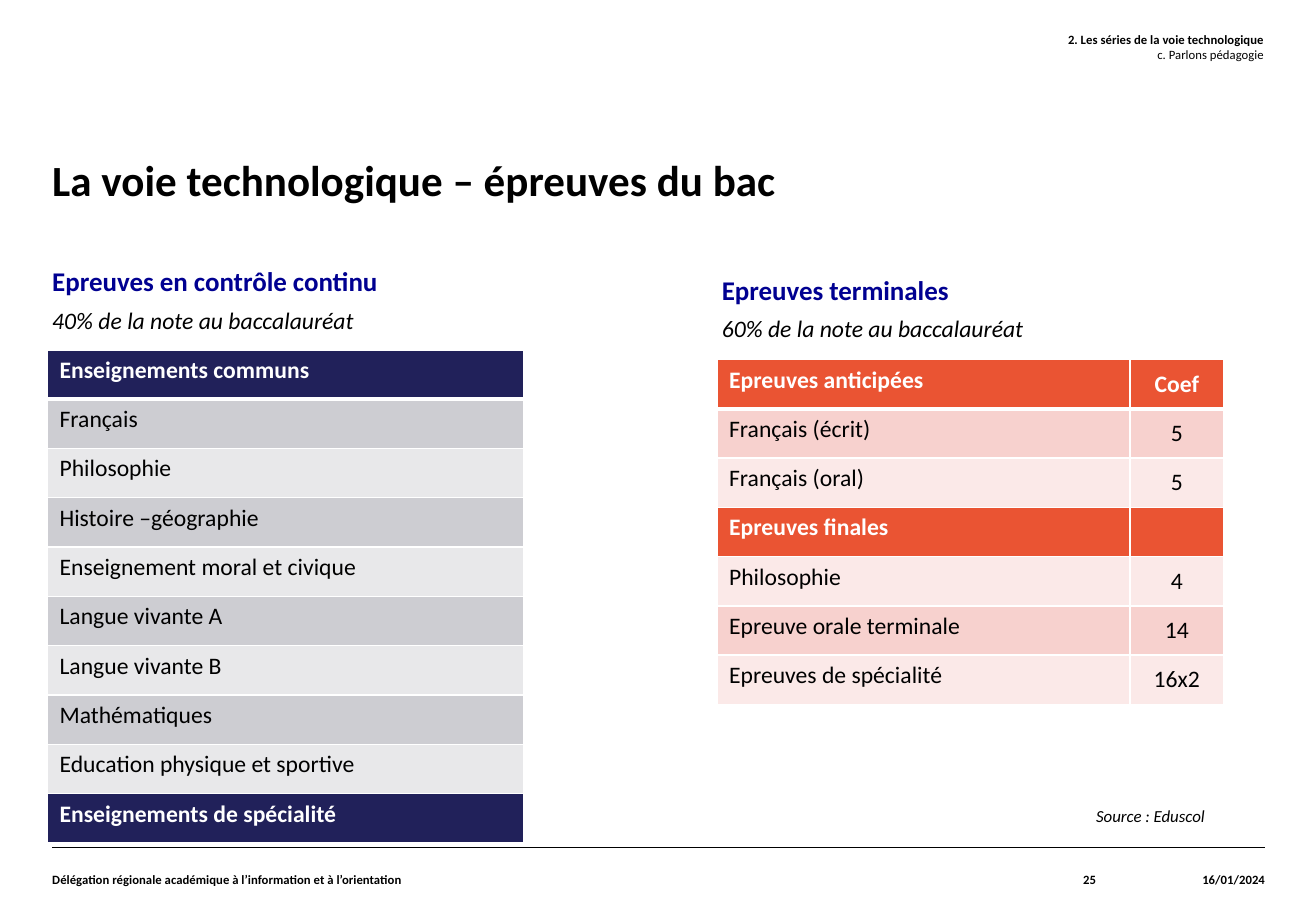
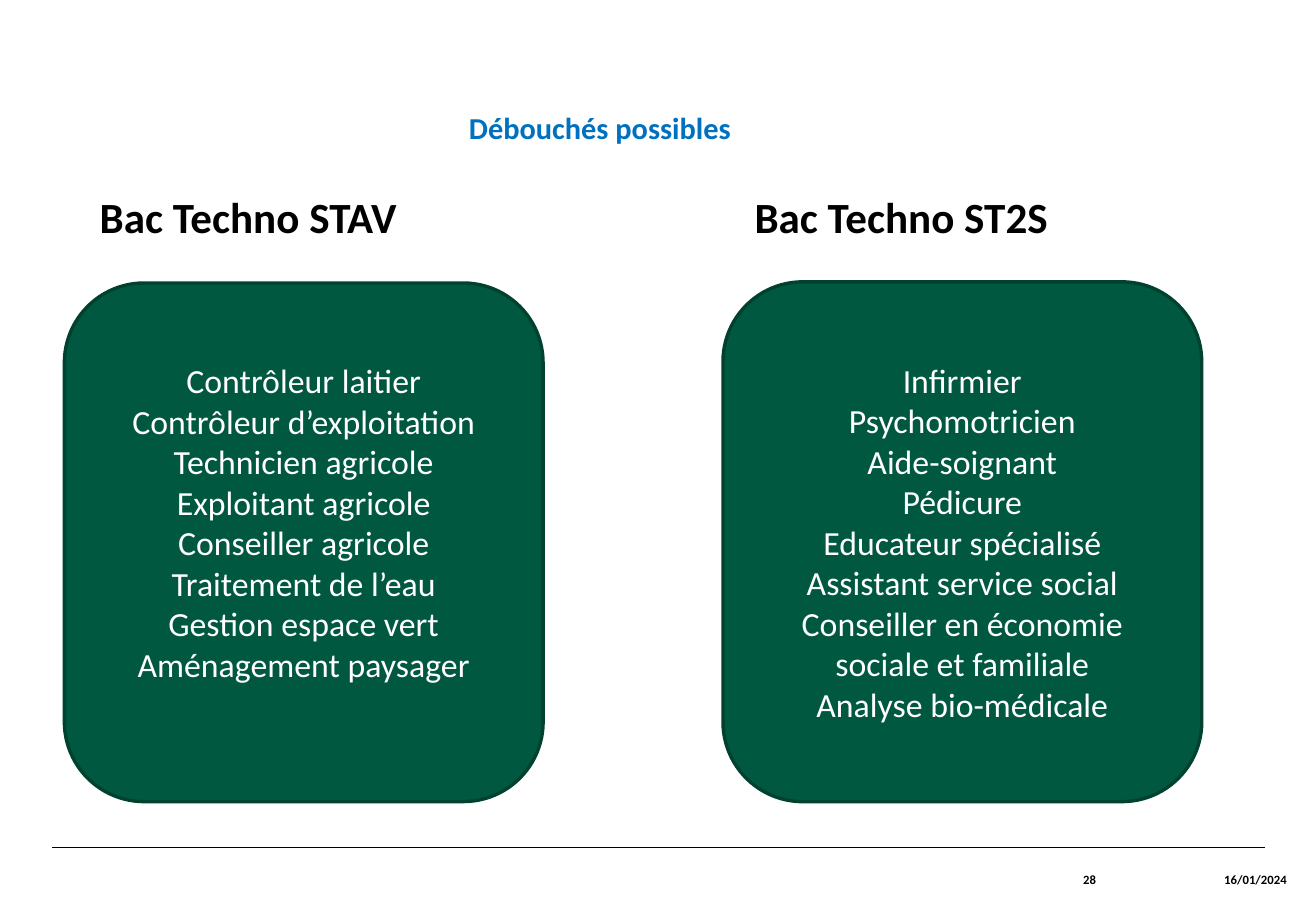
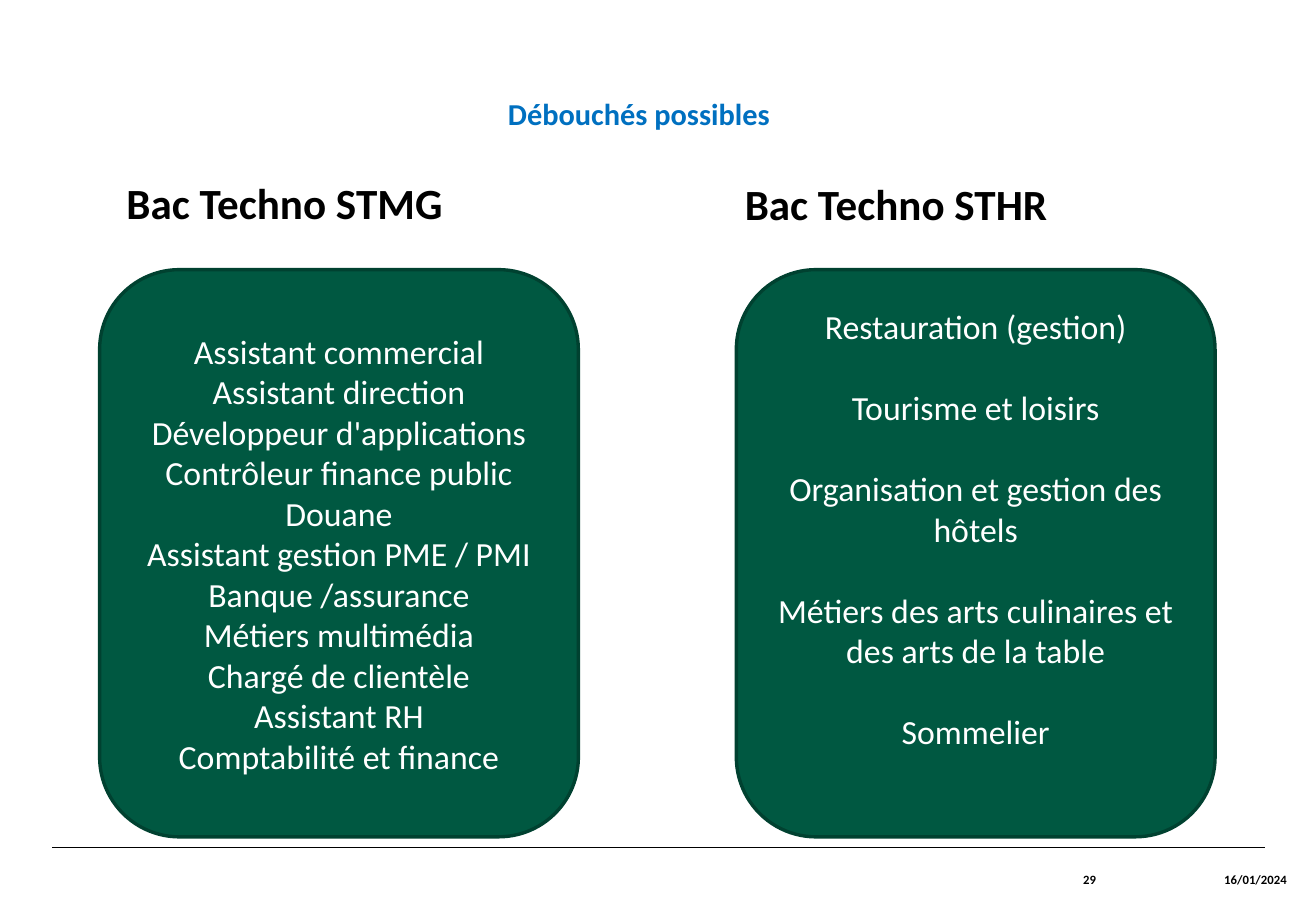
"""Build three slides on the technological baccalaureate: exams and careers."""
from dataclasses import dataclass
from typing import Any, NamedTuple

from lxml import etree
from pptx import Presentation
from pptx.dml.color import RGBColor
from pptx.enum.shapes import MSO_CONNECTOR, MSO_SHAPE
from pptx.enum.text import MSO_ANCHOR, MSO_AUTO_SIZE, PP_ALIGN
from pptx.oxml.ns import qn
from pptx.slide import Slide
from pptx.table import _Cell
from pptx.text.text import TextFrame
from pptx.util import Inches, Pt

LEFT, CENTER, RIGHT = PP_ALIGN.LEFT, PP_ALIGN.CENTER, PP_ALIGN.RIGHT
TOP, MIDDLE = MSO_ANCHOR.TOP, MSO_ANCHOR.MIDDLE
NO_FIT = MSO_AUTO_SIZE.NONE
ROUND = MSO_SHAPE.ROUNDED_RECTANGLE
STRAIGHT = MSO_CONNECTOR.STRAIGHT

BLACK = RGBColor(0x00, 0x00, 0x00)
WHITE = RGBColor(0xFF, 0xFF, 0xFF)
BLUE = RGBColor(0x00, 0x00, 0x91)
SKY = RGBColor(0x00, 0x70, 0xC0)
GREEN = RGBColor(0x00, 0x58, 0x41)
PINE = RGBColor(0x00, 0x41, 0x30)
NAVY = RGBColor(0x21, 0x21, 0x5A)
GREY = RGBColor(0xCD, 0xCD, 0xD2)
PALE = RGBColor(0xE8, 0xE8, 0xEA)
ORANGE = RGBColor(0xEA, 0x54, 0x33)
ROSE = RGBColor(0xF7, 0xD1, 0xCE)
BLUSH = RGBColor(0xFB, 0xE9, 0xE8)

FACE = "Calibri"
DATE = "16/01/2024"


@dataclass(frozen=True)
class Style:
    """Look of a run of text."""
    size: float
    color: RGBColor = BLACK
    bold: bool = False
    italic: bool = False


TITLE = Style(25.5, bold=True)
HEAD = Style(16, BLUE, bold=True)
SHARE = Style(14, italic=True)
CELL = Style(14)
CELL_HEAD = Style(14, WHITE, bold=True)
SMALL = Style(7.5)
SMALL_BOLD = Style(7.5, bold=True)
SOURCE = Style(10, italic=True)
TOPIC = Style(18, SKY, bold=True)
JOB = Style(20, WHITE)


class Area(NamedTuple):
    """Place and size in inches."""
    left: float
    top: float
    width: float
    height: float


class Line(NamedTuple):
    """One paragraph and its style."""
    text: str
    style: Style


@dataclass(frozen=True)
class Grid:
    """A table with head rows and two band colours."""
    area: Area
    widths: tuple[float, ...]
    rows: tuple[tuple[str, ...], ...]
    heads: tuple[int, ...]
    main: RGBColor
    bands: tuple[RGBColor, RGBColor]


@dataclass(frozen=True)
class Card:
    """A course name above a rounded panel of jobs."""
    name: str
    label: Area
    panel: Area
    jobs: tuple[str, ...]
    gap: float = 0
    foot: float = 0.05


@dataclass(frozen=True)
class Page:
    """A careers slide."""
    number: str
    topic: Area
    cards: tuple[Card, Card]


def apply(target: Any, values: dict[str, Any]) -> None:
    """Set each attribute named in a dict."""
    for name, value in values.items():
        setattr(target, name, value)


def place(shape: Any, area: Area) -> None:
    """Move and size a shape."""
    apply(shape, {k: Inches(v) for k, v in area._asdict().items()})


def write(frame: TextFrame, lines: list[Line], align: PP_ALIGN = LEFT,
          after: float = 0, gap: float = 0, pitch: float = 1) -> None:
    """Fill a text frame with styled paragraphs."""
    for index, line in enumerate(lines):
        para = frame.add_paragraph() if index else frame.paragraphs[0]
        apply(para, {"alignment": align, "line_spacing": pitch,
                     "space_before": Pt(gap if index else 0),
                     "space_after": Pt(after)})
        run = para.add_run()
        run.text = line.text
        apply(run.font, {"name": FACE, "size": Pt(line.style.size),
                         "bold": line.style.bold, "italic": line.style.italic})
        run.font.color.rgb = line.style.color


def strip(frame: TextFrame, anchor: MSO_ANCHOR = TOP) -> None:
    """Wrap a frame and drop its margins."""
    apply(frame, {"word_wrap": True, "auto_size": NO_FIT,
                  "vertical_anchor": anchor, "margin_left": 0, "margin_top": 0,
                  "margin_right": 0, "margin_bottom": 0})


def label(slide: Slide, area: Area, lines: list[Line], align: PP_ALIGN = LEFT,
          anchor: MSO_ANCHOR = TOP, pitch: float = 1) -> None:
    """Add a text box without margins."""
    box = slide.shapes.add_textbox(*map(Inches, area))
    strip(box.text_frame, anchor)
    write(box.text_frame, lines, align, pitch=pitch)


def title(slide: Slide, text: str, area: Area) -> None:
    """Set the slide title."""
    place(slide.shapes.title, area)
    strip(slide.shapes.title.text_frame)
    write(slide.shapes.title.text_frame, [Line(text, TITLE)], pitch=0.9)


def body(slide: Slide, index: int, area: Area, lines: list[Line]) -> None:
    """Fill a body placeholder without bullets."""
    holder = slide.placeholders[index]
    place(holder, area)
    strip(holder.text_frame)
    write(holder.text_frame, lines, after=5)
    for para in holder.text_frame.paragraphs:
        props = para._p.get_or_add_pPr()
        props.set("marL", "0")
        props.set("indent", "0")
        etree.SubElement(props, qn("a:buNone"))


def footer(slide: Slide, number: str, left: float) -> None:
    """Draw the rule, page number and date."""
    rule = slide.shapes.add_connector(
        STRAIGHT, Inches(0.43), Inches(6.98), Inches(10.41), Inches(6.98))
    rule.line.color.rgb = BLACK
    rule.line.width = Pt(0.8)
    etree.SubElement(rule._element.spPr, qn("a:effectLst"))
    for text, area in ((number, Area(7.42, 6.98, 1.6, 0.52)),
                       (DATE, Area(left, 6.98, 1.39, 0.52))):
        label(slide, area, [Line(text, SMALL_BOLD)], RIGHT, MIDDLE)


def border(cell: _Cell, base: float, top: float) -> None:
    """Give a cell white borders."""
    props = cell._tc.get_or_add_tcPr()
    for side, width in (("L", 1), ("R", 1), ("T", top), ("B", base)):
        edge = etree.SubElement(props, qn(f"a:ln{side}"), w=str(Pt(width)))
        fill = etree.SubElement(edge, qn("a:solidFill"))
        etree.SubElement(fill, qn("a:srgbClr"), val=str(WHITE))


def table(slide: Slide, grid: Grid) -> None:
    """Draw a banded table."""
    frame = slide.shapes.add_table(
        len(grid.rows), len(grid.widths), *map(Inches, grid.area))
    frame.table.horz_banding = False
    for column, width in zip(frame.table.columns, grid.widths):
        column.width = Inches(width)
    for row, texts in enumerate(grid.rows):
        head = row in grid.heads
        for col, text in enumerate(texts):
            cell = frame.table.cell(row, col)
            border(cell, 1 if row else 3, 3 if row == 1 else 1)
            cell.fill.solid()
            cell.fill.fore_color.rgb = grid.main if head else grid.bands[row % 2]
            cell.vertical_anchor = MIDDLE if col else TOP
            if text:
                write(cell.text_frame, [Line(text, CELL_HEAD if head else CELL)],
                      CENTER if col else LEFT)


def panel(slide: Slide, card: Card) -> None:
    """Draw the rounded panel of jobs."""
    shape = slide.shapes.add_shape(ROUND, *map(Inches, card.panel))
    shape.shadow.inherit = False
    shape.fill.solid()
    shape.fill.fore_color.rgb = GREEN
    shape.line.color.rgb = PINE
    shape.line.width = Pt(2)
    apply(shape.text_frame, {"word_wrap": True, "vertical_anchor": MIDDLE,
                             "margin_bottom": Inches(card.foot)})
    write(shape.text_frame, [Line(job, JOB) for job in card.jobs],
          CENTER, gap=card.gap)


COMMON = Grid(
    Area(0.39, 2.88, 3.92, 4.06), (3.92,),
    (("Enseignements communs",), ("Français",), ("Philosophie",),
     ("Histoire –géographie",), ("Enseignement moral et civique",),
     ("Langue vivante A",), ("Langue vivante B",), ("Mathématiques",),
     ("Education physique et sportive",), ("Enseignements de spécialité",)),
    (0, 9), NAVY, (PALE, GREY))

FINAL = Grid(
    Area(5.9, 2.96, 4.17, 2.84), (3.4, 0.77),
    (("Epreuves anticipées", "Coef"), ("Français (écrit)", "5"),
     ("Français (oral)", "5"), ("Epreuves finales", ""), ("Philosophie", "4"),
     ("Epreuve orale terminale", "14"), ("Epreuves de spécialité", "16x2")),
    (0, 3), ORANGE, (BLUSH, ROSE))

PAGES = (
    Page("28", Area(3.86, 0.9, 2.6, 0.3), (
        Card("Bac Techno STAV", Area(0.82, 1.62, 3.34, 0.47),
             Area(0.53, 2.33, 3.94, 4.27),
             ("Contrôleur laitier", "Contrôleur d’exploitation",
              "Technicien agricole", "Exploitant agricole",
              "Conseiller agricole", "Traitement de l’eau",
              "Gestion espace vert", "Aménagement paysager"), foot=0.38),
        Card("Bac Techno ST2S", Area(6.21, 1.62, 3.38, 0.55),
             Area(5.95, 2.32, 3.94, 4.28),
             ("Infirmier", "Psychomotricien", "Aide-soignant", "Pédicure",
              "Educateur spécialisé", "Assistant service social",
              "Conseiller en économie sociale et familiale",
              "Analyse bio-médicale")))),
    Page("29", Area(4.18, 0.78, 2.6, 0.3), (
        Card("Bac Techno STMG", Area(1.04, 1.5, 3.57, 0.45),
             Area(0.82, 2.22, 3.94, 4.67),
             ("Assistant commercial", "Assistant direction",
              "Développeur d'applications", "Contrôleur finance public Douane",
              "Assistant gestion PME / PMI", "Banque /assurance",
              "Métiers multimédia", "Chargé de clientèle", "Assistant RH",
              "Comptabilité et finance")),
        Card("Bac Techno STHR", Area(6.13, 1.51, 3.57, 0.45),
             Area(6.06, 2.22, 3.94, 4.67),
             ("Restauration (gestion)", "Tourisme et loisirs",
              "Organisation et gestion des hôtels",
              "Métiers des arts culinaires et des arts de la table",
              "Sommelier"), gap=24, foot=0.45))),
)


def exams(slide: Slide) -> None:
    """Build the exams slide."""
    footer(slide, "25", 9.02)
    title(slide, "La voie technologique – épreuves du bac",
          Area(0.43, 1.31, 9.98, 0.8))
    body(slide, 1, Area(0.43, 2.18, 4.52, 0.65),
         [Line("Epreuves en contrôle continu", HEAD),
          Line("40% de la note au baccalauréat", SHARE)])
    body(slide, 2, Area(5.94, 2.25, 4.52, 0.65),
         [Line("Epreuves terminales", HEAD),
          Line("60% de la note au baccalauréat", SHARE)])
    table(slide, COMMON)
    table(slide, FINAL)
    label(slide, Area(9.02, 6.63, 1.46, 0.32), [Line("Source : Eduscol", SOURCE)])
    label(slide, Area(3.92, 0.26, 6.48, 0.52),
          [Line("2. Les séries de la voie technologique", SMALL_BOLD),
           Line("c. Parlons pédagogie", SMALL)], RIGHT)
    label(slide, Area(0.43, 6.98, 6.99, 0.52),
          [Line("Délégation régionale académique à l’information et à "
                "l’orientation", SMALL_BOLD)], anchor=MIDDLE)


def careers(slide: Slide, page: Page) -> None:
    """Build a careers slide."""
    footer(slide, page.number, 9.2)
    label(slide, page.topic, [Line("Débouchés possibles", TOPIC)])
    first, second = page.cards
    title(slide, first.name, first.label)
    label(slide, second.label, [Line(second.name, TITLE)], pitch=0.9)
    for card in page.cards:
        panel(slide, card)


def main() -> None:
    """Build and save the deck."""
    deck = Presentation()
    deck.slide_width, deck.slide_height = Inches(10.83), Inches(7.5)
    exams(deck.slides.add_slide(deck.slide_layouts.get_by_name("Two Content")))
    plain = deck.slide_layouts.get_by_name("Title Only")
    for page in PAGES:
        careers(deck.slides.add_slide(plain), page)
    deck.save("out.pptx")


if __name__ == "__main__":
    main()
